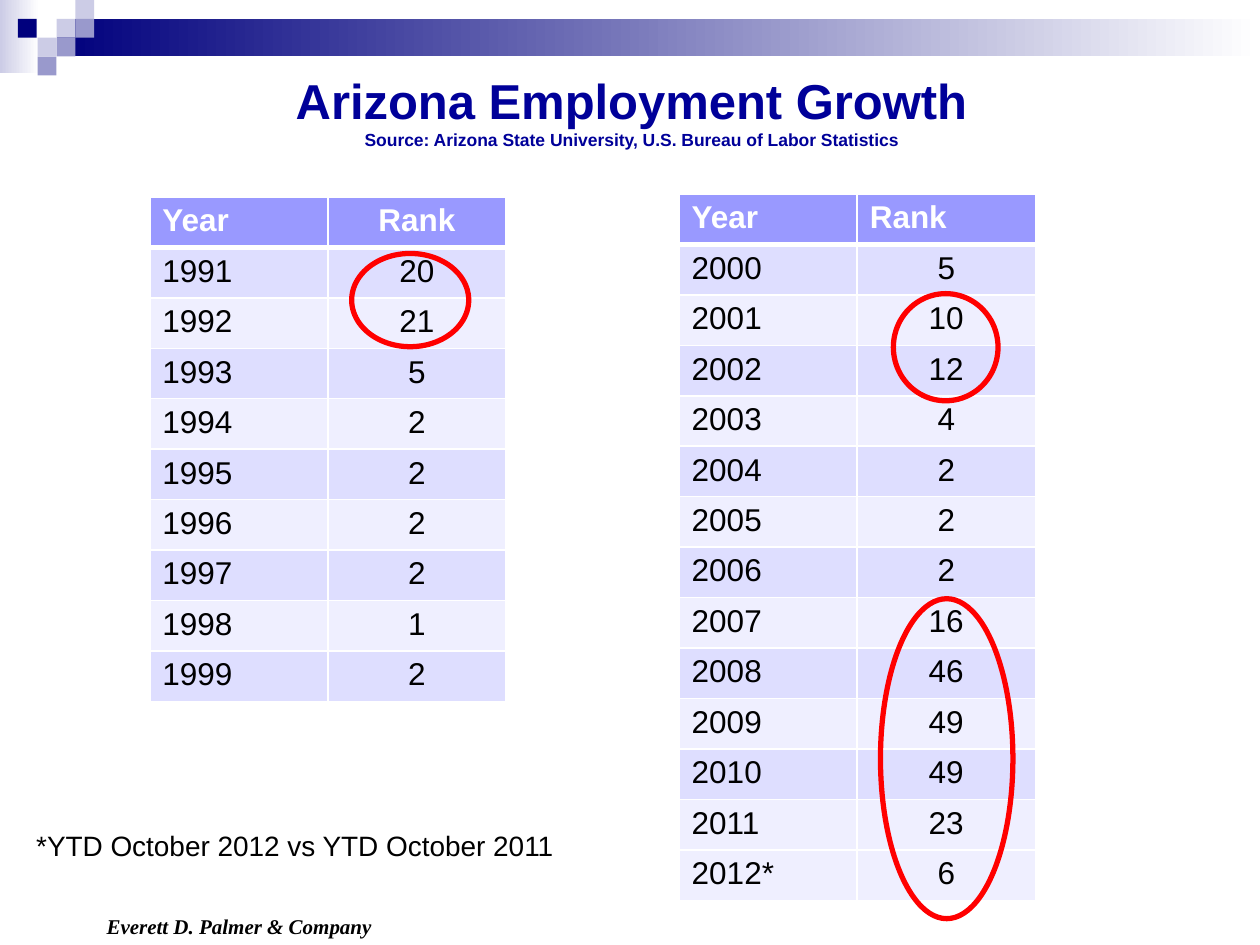
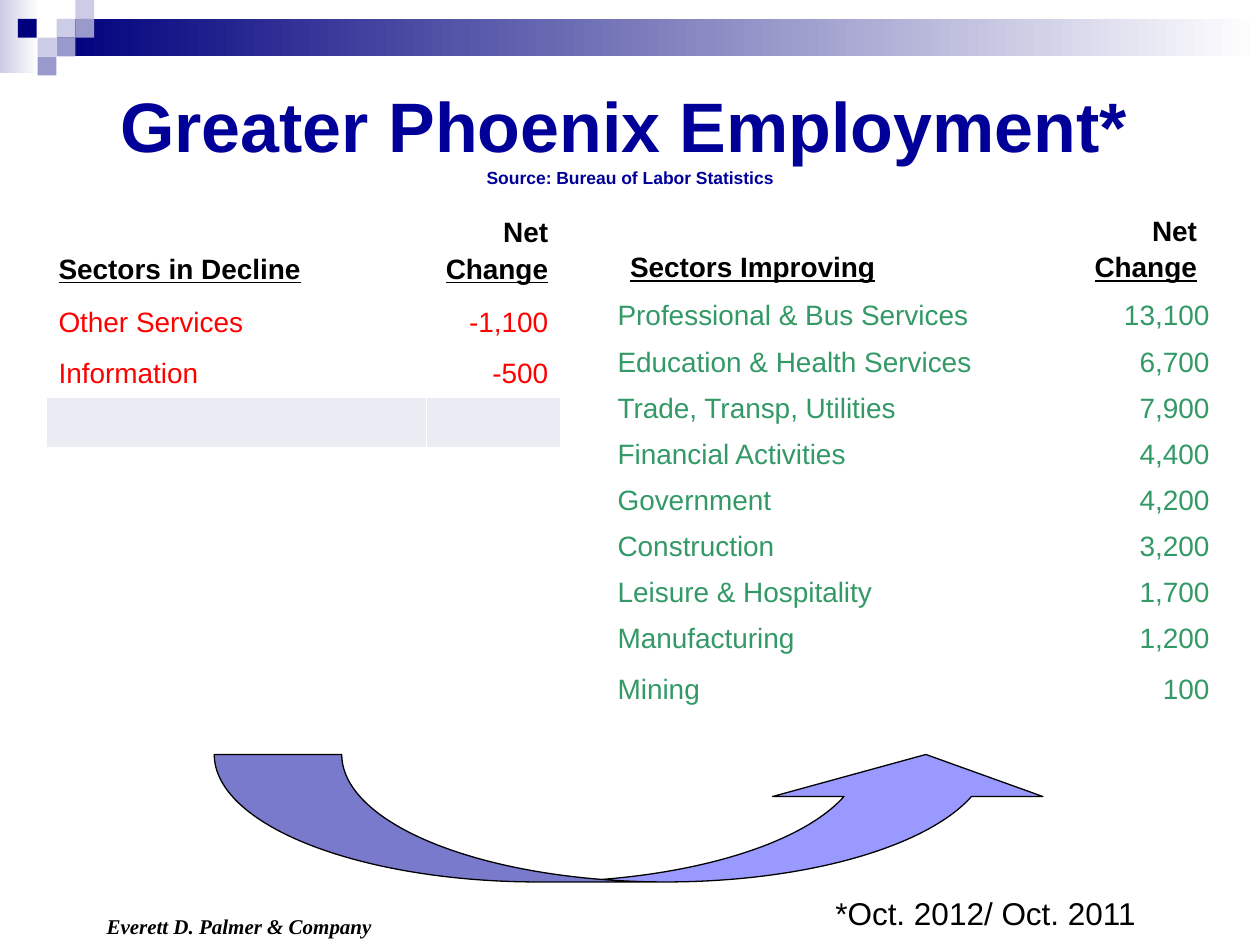
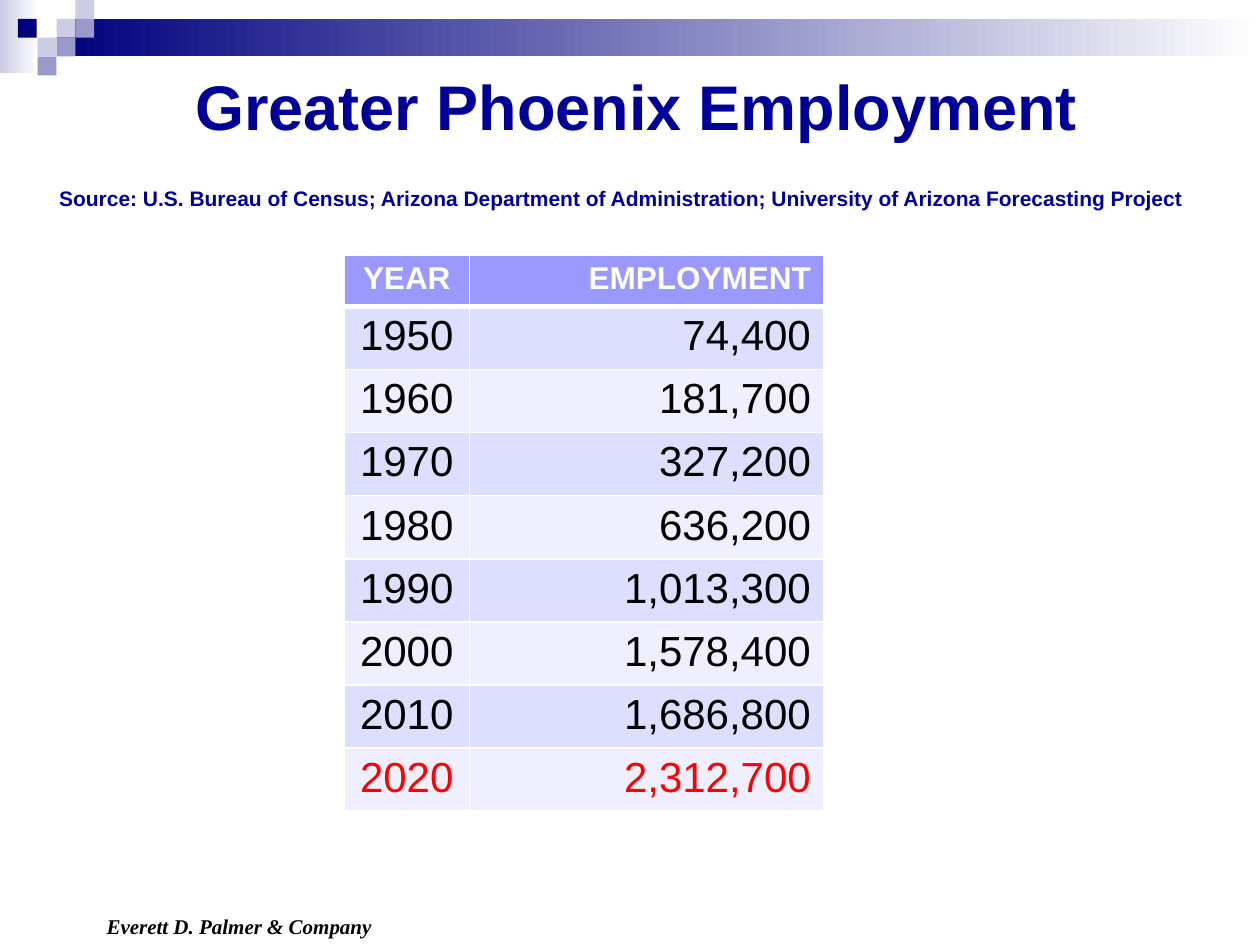
from lxml import etree as et
from pptx import Presentation, util as u
from pptx.dml import color as co
from pptx.enum import shapes as sh, text as tx
from pptx.oxml import ns

INK = {
    "navy": "00007D", "title": "000099", "mid": "9999CC", "light": "CCCCE6",
    "head": "9999FF", "band": "DEDEFF", "pale": "EFEFFF", "white": "FFFFFF",
    "black": "000000", "red": "FF0000", "green": "339966",
}
RGB = {name: co.RGBColor.from_string(tint) for name, tint in INK.items()}
SIDE = {"l": tx.PP_ALIGN.LEFT, "c": tx.PP_ALIGN.CENTER, "r": tx.PP_ALIGN.RIGHT}
BASE = {"name": "Arial", "size": 18, "bold": False, "ink": "black"}
HEAD = {"bold": True, "ink": "white"}
TITLE = {"bold": True, "ink": "title"}
MID, LOW = tx.MSO_ANCHOR.MIDDLE, tx.MSO_ANCHOR.BOTTOM


def say(frame, lines, side="l", gap=0):
    """Write (words, look) pairs as the paragraphs of a frame."""
    for n, (words, look) in enumerate(lines):
        para = frame.add_paragraph() if n else frame.paragraphs[0]
        para.alignment = SIDE[side]
        if n and gap:
            para.space_before = u.Pt(gap)
        run = para.add_run()
        run.text = words
        look = BASE | look
        run.font.color.rgb = RGB[look.pop("ink")]
        look["size"] = u.Pt(look["size"])
        for key, val in look.items():
            setattr(run.font, key, val)


def lay(page, left, top, wides, highs):
    """Add a table with the given column widths and row heights."""
    grid = page.shapes.add_table(
        len(highs), len(wides), u.Cm(left), u.Cm(top),
        u.Cm(sum(wides)), u.Cm(sum(highs))).table
    grid.first_row = grid.horz_banding = False
    for col, wide in zip(grid.columns, wides):
        col.width = u.Cm(wide)
    for row, high in zip(grid.rows, highs):
        row.height = u.Cm(high)
    return grid


deck = Presentation()
deck.slide_width, deck.slide_height = u.Cm(25.4), u.Cm(19.05)
pages = [deck.slides.add_slide(deck.slide_layouts[6]) for _ in range(3)]

# Bands, corner squares and footer on every slide
STEP = 0.38
fades = [(0, 0, 0.79, 1.47, "light"), (1.14, STEP, 24.26, 0.76, "navy")]
tiles = [(3, 1, "light"), (4, 0, "light"), (4, 1, "mid"), (2, 2, "light"),
         (0.95, 1, "navy"), (3, 2, "mid"), (2, 3, "mid")]
bands = fades + [(c * STEP, r * STEP, STEP, STEP, ink) for c, r, ink in tiles]
for page in pages:
    for n, (*spot, ink) in enumerate(bands):
        band = page.shapes.add_shape(sh.MSO_SHAPE.RECTANGLE, *map(u.Cm, spot))
        band.shadow.inherit = False
        band.line.fill.background()
        if n < len(fades):
            band.fill.gradient()
            band.fill.gradient_angle = 0
            for stop, tint in zip(band.fill.gradient_stops, (ink, "white")):
                stop.color.rgb = RGB[tint]
        else:
            band.fill.solid()
            band.fill.fore_color.rgb = RGB[ink]
    foot = page.shapes.add_textbox(*map(u.Cm, (1.9, 18.29, 6.35, 0.76)))
    foot.text_frame.word_wrap = True
    say(foot.text_frame, [("Everett D. Palmer & Company", {
        "name": "Times New Roman", "size": 12, "bold": True, "italic": True})])

# Titles with their source lines, each with its left indent
heads = [
    ((1.3, 0.64, 22.86, 3.18), MID, 0, (0, 0), "Arizona Employment Growth", 28,
     "Source: Arizona State University, U.S. Bureau of Labor Statistics", 10),
    ((1.14, 1.14, 22.86, 3.18), MID, 0, (0, 0.26), "Greater Phoenix Employment*", 40,
     "Source: Bureau of Labor Statistics", 10),
    ((0.25, 1.19, 24.56, 3.18), LOW, 24, (0.6, 0), "Greater Phoenix Employment", 36,
     "Source: U.S. Bureau of Census; Arizona Department of Administration; "
     "University of Arizona Forecasting Project", 12),
]
for page, (spot, hold, gap, dents, name, big, source, small) in zip(pages, heads):
    frame = page.shapes.add_textbox(*map(u.Cm, spot)).text_frame
    frame.word_wrap = True
    frame.vertical_anchor = hold
    say(frame, [(name, TITLE | {"size": big}),
                (source, TITLE | {"size": small})], "c", gap)
    for para, dent in zip(frame.paragraphs, dents):
        para._p.get_or_add_pPr().set("marL", str(u.Cm(dent)))

# Banded tables: ranks on the first slide, employment on the last
late = [5, 10, 12, 4, 2, 2, 2, 16, 46, 49, 49, 23]
early = [20, 21, 5, 2, 2, 2, 2, 1, 2]
jobs = ["74,400", "181,700", "327,200", "636,200", "1,013,300", "1,578,400",
        "1,686,800", "2,312,700"]
ranks = ("Year", "Rank")
slim = 14.22 / 14
grids = [
    (0, 13.69, 3.91, (3.59, 3.59), slim, slim, 18, "ll", "lc",
     [ranks, *enumerate(late, 2000), ("2012*", 6)]),
    (0, 3.02, 3.97, (3.59, 3.59), slim, slim, 18, "lc", "lc",
     [ranks, *enumerate(early, 1991)]),
    (2, 6.94, 5.14, (2.52, 7.14), 1.04, 1.27, 24, "cr", "cr",
     [("YEAR", "EMPLOYMENT"), *zip(range(1950, 2021, 10), jobs)]),
]
for at, left, top, wides, first, high, size, tops, sides, rows in grids:
    grid = lay(pages[at], left, top, wides, [first] + [high] * (len(rows) - 1))
    for r, row in enumerate(rows):
        tint = "band" if r % 2 and row[0] != "2012*" else "pale"
        look = {"size": size, "ink": "red" if row[0] == 2020 else "black"}
        if r == 0:
            tint, look = "head", HEAD
        for c, words in enumerate(row):
            cell = grid.cell(r, c)
            say(cell.text_frame, [(str(words), look)], (sides if r else tops)[c])
            props = cell._tc.get_or_add_tcPr()
            for edge in "LRTB":
                thick = 3 if (r, edge) in ((0, "B"), (1, "T")) else 1
                line = et.SubElement(props, ns.qn("a:ln" + edge), w=str(u.Pt(thick)))
                fill = et.SubElement(line, ns.qn("a:solidFill"))
                et.SubElement(fill, ns.qn("a:srgbClr"), val=INK["white"])
            cell.fill.solid()
            cell.fill.fore_color.rgb = RGB[tint]

# Red rings around the weak years
for spot in [(7.09, 5.11, 2.36, 1.88), (18.01, 5.92, 2.11, 2.16),
             (17.75, 12.07, 2.67, 6.45)]:
    ring = pages[0].shapes.add_shape(sh.MSO_SHAPE.OVAL, *map(u.Cm, spot))
    ring.shadow.inherit = False
    ring.fill.background()
    ring.line.color.rgb = RGB["red"]
    ring.line.width = u.Pt(3)

# Sector lists; the list of declines ends with a spare row
down = [("Other Services", "-1,100"), ("Information", "-500"), ()]
rise = [
    ("Professional & Bus Services", "13,100"),
    ("Education & Health Services", "6,700"),
    ("Trade, Transp, Utilities", "7,900"),
    ("Financial Activities", "4,400"),
    ("Government", "4,200"),
    ("Construction", "3,200"),
    ("Leisure & Hospitality", "1,700"),
    ("Manufacturing", "1,200"),
    ("Mining", "100"),
]
lists = [
    (0.93, 4.19, (7.67, 2.7), [1.75, 1.14, 0.93, 0.93], "Sectors in Decline",
     "red", 0.25, down),
    (12.45, 4.16, (7.87, 4.06), [1.75] + [0.93] * 8 + [1.12],
     "Sectors Improving", "green", 0, rise),
]
bold = {"size": 16, "bold": True}
under = bold | {"underline": True}
for left, top, wides, highs, name, ink, inset, rows in lists:
    grid = lay(pages[1], left, top, wides, highs)
    plain = {"size": 16, "ink": ink}
    cells = [([(name, under)], [("Net", bold), ("Change", under)])]
    cells += [[[(words, plain)] for words in row] for row in rows]
    for r, row in enumerate(cells):
        for c, lines in enumerate(row):
            cell = grid.cell(r, c)
            cell.fill.background()
            pad = inset if r else 0.25
            form = {"vertical_anchor": MID if r else LOW,
                    "margin_left": u.Cm(pad), "margin_right": u.Cm(pad),
                    "margin_top": u.Cm(pad / 2 if r else 0),
                    "margin_bottom": u.Cm(pad / 2 if r else 0.19)}
            for key, val in form.items():
                setattr(cell, key, val)
            say(cell.text_frame, lines, "lr"[c], 3.2)

# Arrow from decline to improvement
arrow = pages[1].shapes.add_shape(
    sh.MSO_SHAPE.CURVED_UP_ARROW, *map(u.Cm, (4.32, 15.21, 17.07, 2.57)))
arrow.shadow.inherit = False
arrow.fill.solid()
arrow.fill.fore_color.rgb = RGB["head"]
arrow.line.color.rgb = RGB["black"]
arrow.line.width = u.Pt(0.75)
for n, val in enumerate((1.06, 2.12, 0.33)):
    arrow.adjustments[n] = val

# Period notes
notes = [(0, (0.48, 16.57, 11.07, 0.94), 16, "*YTD October 2012 vs YTD October 2011"),
         (1, (16.59, 17.9, 6.63, 1.02), 18, "*Oct. 2012/ Oct. 2011")]
for at, spot, size, words in notes:
    frame = pages[at].shapes.add_textbox(*map(u.Cm, spot)).text_frame
    frame.word_wrap = False
    say(frame, [(words, {"size": size})])

deck.save("out.pptx")
